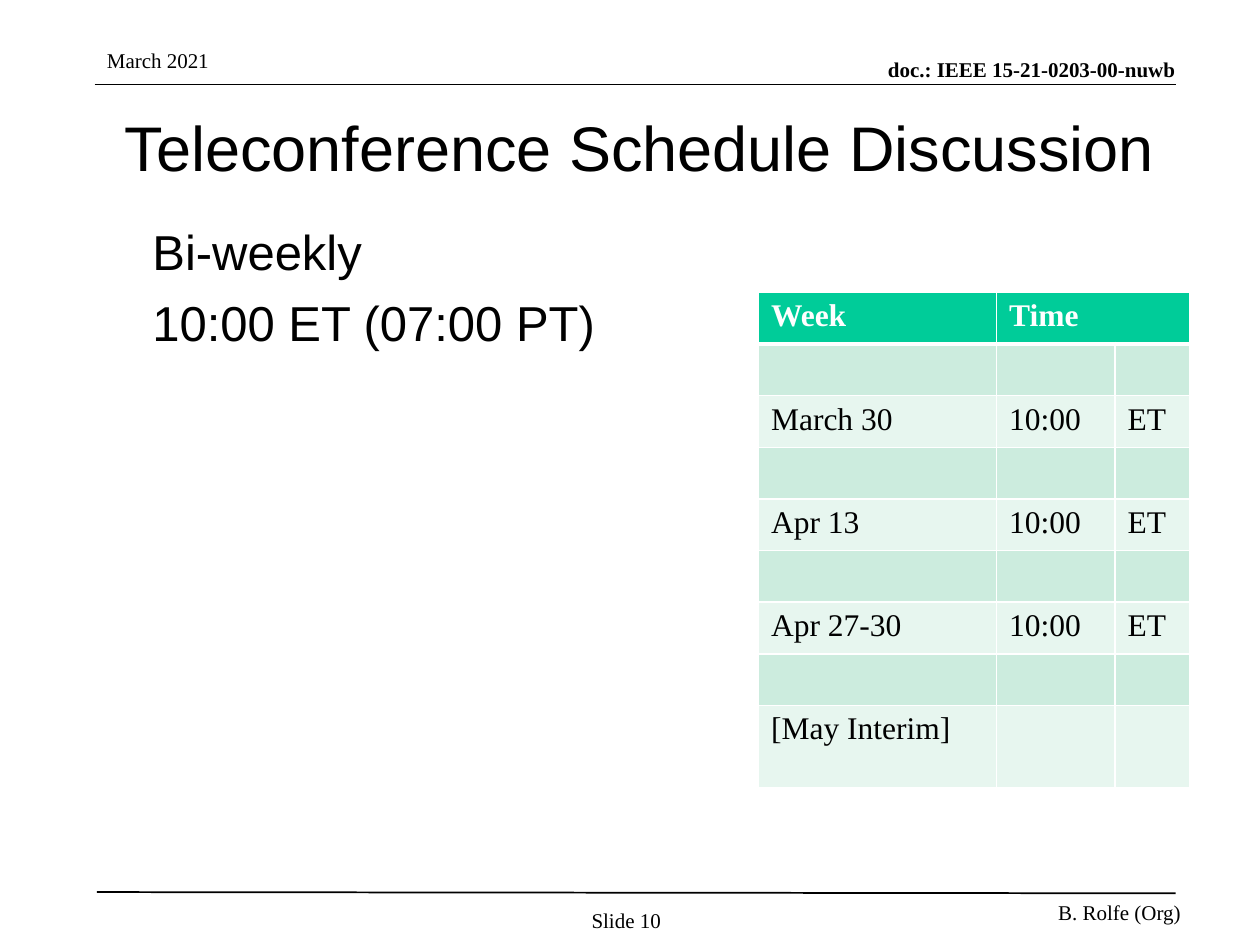
from lxml import etree
from pptx import Presentation
from pptx.dml.color import RGBColor
from pptx.enum.shapes import MSO_CONNECTOR
from pptx.enum.text import MSO_ANCHOR, PP_ALIGN
from pptx.oxml.ns import qn
from pptx.util import Inches, Pt

THEME = {
    "serif": "Times New Roman", "sans": "Arial",
    "ink": "000000", "white": "FFFFFF",
    "header": "00CC99", "bands": ("CCECDE", "E7F6EF"),
    "small": 12, "cell": 18, "body": 28, "title": 36,
}

DATE = "March 2021"
DOC = "doc.: IEEE 15-21-0203-00-nuwb"
TITLE = "Teleconference Schedule Discussion"
BODY = ["Bi-weekly", "10:00 ET (07:00 PT)"]
PAGE = "Slide 10"
AUTHOR = "B. Rolfe (Org)"
BLANK = ("", "", "")
SCHEDULE = [
    ("Week", "Time", ""),
    BLANK, ("March 30", "10:00", "ET"),
    BLANK, ("Apr 13", "10:00", "ET"),
    BLANK, ("Apr 27-30", "10:00", "ET"),
    BLANK, ("[May Interim]", "", ""),
]
COL_WIDTHS = (1.89, 0.94, 0.59)
ROW_HEIGHT, LAST_ROW_HEIGHT = 0.41, 0.65
RULES = [(0.75, 0.67, 9.33, 0.67), (0.77, 7.08, 9.33, 7.09)]


def write(tf, lines, size, font="serif", color="ink", bold=False,
          align=PP_ALIGN.LEFT, anchor=MSO_ANCHOR.TOP, gap=0,
          margins=(0.1, 0.05, 0.1, 0.05)):
    """Fill a text frame, one paragraph a line; margins are left, top, right, bottom."""
    tf.word_wrap = True
    tf.vertical_anchor = anchor
    (tf.margin_left, tf.margin_top,
     tf.margin_right, tf.margin_bottom) = map(Inches, margins)
    for i, line in enumerate(lines):
        p = tf.add_paragraph() if i else tf.paragraphs[0]
        p.alignment = align
        if i:
            p.space_before = Pt(gap)
        r = p.add_run()
        r.text = line
        r.font.name = THEME[font]
        r.font.size = Pt(THEME[size])
        r.font.bold = bold
        r.font.color.rgb = RGBColor.from_string(THEME[color])


def add_text(s, box, lines, size, **fmt):
    write(s.shapes.add_textbox(*map(Inches, box)).text_frame, lines, size, **fmt)


def add_rule(s, ends):
    line = s.shapes.add_connector(MSO_CONNECTOR.STRAIGHT, *map(Inches, ends))
    line.line.color.rgb = RGBColor.from_string(THEME["ink"])
    line.line.width = Pt(1)
    etree.SubElement(line._element.spPr, qn("a:effectLst"))


def style_cell(cell, fill, bottom):
    """Set white borders, then the fill; bottom is the lower border in points."""
    tcPr = cell._tc.get_or_add_tcPr()
    for side, width in (("L", 1), ("R", 1), ("T", 1), ("B", bottom)):
        ln = etree.SubElement(tcPr, qn(f"a:ln{side}"), w=str(Pt(width)))
        paint = etree.SubElement(ln, qn("a:solidFill"))
        etree.SubElement(paint, qn("a:srgbClr"), val=THEME["white"])
    cell.fill.solid()
    cell.fill.fore_color.rgb = RGBColor.from_string(fill)


def add_schedule(s, left, top):
    heights = [ROW_HEIGHT] * (len(SCHEDULE) - 1) + [LAST_ROW_HEIGHT]
    table = s.shapes.add_table(
        len(SCHEDULE), len(COL_WIDTHS), Inches(left), Inches(top),
        Inches(sum(COL_WIDTHS)), Inches(sum(heights))).table
    for col, width in zip(table.columns, COL_WIDTHS):
        col.width = Inches(width)
    for i, (row, height, texts) in enumerate(zip(table.rows, heights, SCHEDULE)):
        row.height = Inches(height)
        head = i == 0
        fill = THEME["header"] if head else THEME["bands"][(i - 1) % 2]
        for cell, text in zip(row.cells, texts):
            style_cell(cell, fill, 3 if head else 1)
            if text:
                write(cell.text_frame, [text], "cell", bold=head,
                      color="white" if head else "ink")
    table.cell(0, 1).merge(table.cell(0, 2))


def main():
    prs = Presentation()
    prs.slide_width, prs.slide_height = Inches(10), Inches(7.5)
    s = prs.slides.add_slide(prs.slide_layouts[6])
    flush = (0, 0, 0, 0)

    add_text(s, (5, 0.45, 4.33, 0.2), [DOC], "small", bold=True,
             align=PP_ALIGN.RIGHT, anchor=MSO_ANCHOR.BOTTOM, margins=flush)
    for ends in RULES:
        add_rule(s, ends)
    add_text(s, (0.75, 0.33, 1.92, 0.31), [DATE], "small")
    add_text(s, (5.37, 7.09, 4.1, 0.31), [AUTHOR], "small", align=PP_ALIGN.RIGHT)
    add_text(s, (0.83, 0.75, 8.49, 0.82), [TITLE], "title", font="sans",
             align=PP_ALIGN.CENTER, anchor=MSO_ANCHOR.MIDDLE)
    add_text(s, (0.67, 1.71, 5.36, 5.16), BODY, "body", font="sans", gap=7,
             margins=(0.54, 0.05, 0.1, 0.05))
    add_text(s, (4.61, 7.17, 0.72, 0.26), [PAGE], "small",
             align=PP_ALIGN.CENTER, anchor=MSO_ANCHOR.MIDDLE, margins=flush)
    add_schedule(s, 6.02, 2.32)
    prs.save("out.pptx")


if __name__ == "__main__":
    main()
